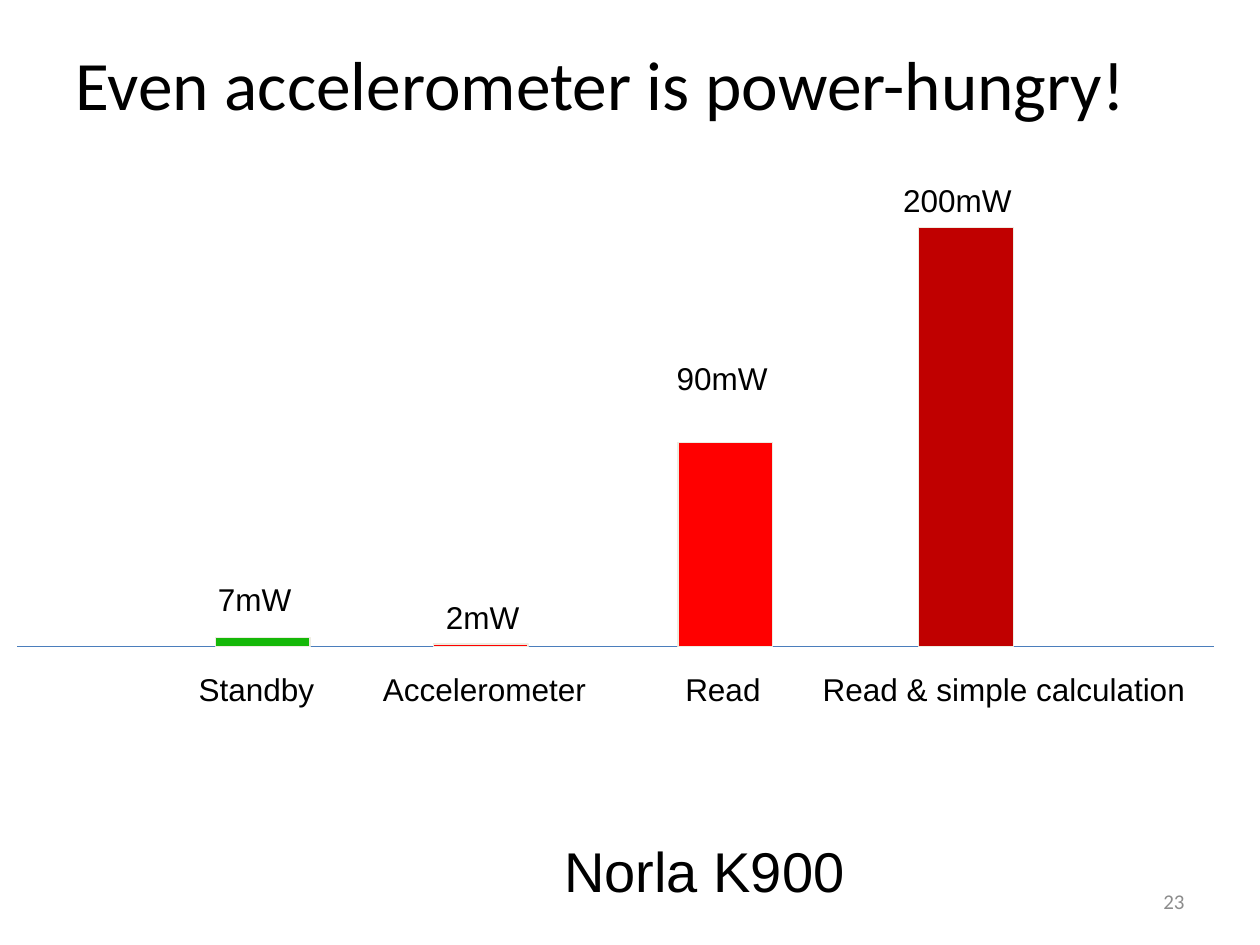
from dataclasses import dataclass

from lxml.etree import SubElement
from pptx import Presentation
from pptx.dml.color import RGBColor
from pptx.enum.shapes import MSO_CONNECTOR as Connector, MSO_SHAPE as Shape
from pptx.enum.text import MSO_ANCHOR as Anchor, PP_ALIGN as Align
from pptx.oxml.ns import qn
from pptx.util import Pt

BLACK = RGBColor(0x00, 0x00, 0x00)
GRAY = RGBColor(0x8C, 0x8C, 0x8C)
CREAM = RGBColor(0xEE, 0xEC, 0xE1)
BLUE = RGBColor(0x4B, 0x7E, 0xBC)
GREEN = RGBColor(0x15, 0xB8, 0x08)
RED = RGBColor(0xFF, 0x00, 0x00)
DARK_RED = RGBColor(0xC0, 0x00, 0x00)

BASELINE = 369.5
BAR_WIDTH = 54
LABEL_HEIGHT = 29
CAPTION_TOP = 379.5


@dataclass
class Board:
    """Draws styled elements on the current slide, measured in points."""

    slide: object
    font: str = "Arial"
    size: float = 18
    color: RGBColor = BLACK

    def text(self, words, left, top, width, height, anchor=Anchor.TOP,
             align=Align.LEFT, wrap=True, **style):
        frame = self.slide.shapes.add_textbox(
            Pt(left), Pt(top), Pt(width), Pt(height)).text_frame
        frame.word_wrap = wrap
        frame.vertical_anchor = anchor
        paragraph = frame.paragraphs[0]
        paragraph.alignment = align
        run = paragraph.add_run()
        run.text = words
        look = {"name": self.font, "size": Pt(self.size)} | style
        color = look.pop("color", self.color)
        for key, value in look.items():
            setattr(run.font, key, value)
        run.font.color.rgb = color

    def bar(self, left, height, color):
        bar = self.slide.shapes.add_shape(
            Shape.RECTANGLE, Pt(left), Pt(BASELINE - height),
            Pt(BAR_WIDTH), Pt(height))
        bar.shadow.inherit = False
        bar.fill.solid()
        bar.fill.fore_color.rgb = color
        bar.line.color.rgb = CREAM
        bar.line.width = Pt(0)

    def axis(self, start, end):
        axis = self.slide.shapes.add_connector(
            Connector.STRAIGHT, Pt(start), Pt(BASELINE), Pt(end), Pt(BASELINE))
        axis.line.color.rgb = BLUE
        axis.line.width = Pt(0.75)
        SubElement(axis.element.spPr, qn("a:effectLst"))


def main():
    deck = Presentation()
    deck.slide_width, deck.slide_height = Pt(720), Pt(540)
    board = Board(deck.slides.add_slide(deck.slide_layouts[6]))

    board.text("Even accelerometer is power-hungry!", 36, 2.2, 648, 90,
               anchor=Anchor.MIDDLE, name="Calibri", size=Pt(39.6))
    board.axis(10, 694)

    readings = [
        ((123.2, 5, GREEN), ("7mW", 117.4, 327.6, 66), ("Standby", 106.5, 99.5)),
        ((247.7, 1.5, RED), ("2mW", 247.7, 338.4, 66), ("Accelerometer", 211.7, 132.5)),
        ((387.4, 116.8, RED), ("90mW", 379.5, 201.6, 84), ("Read", 384.5, 74)),
        ((525, 239.5, DARK_RED), ("200mW", 509, 100, 84),
         ("Read & simple calculation", 463, 243.5)),
    ]
    for bar, (power, left, top, width), (state, state_left, state_width) in readings:
        board.bar(*bar)
        board.text(power, left, top, width, LABEL_HEIGHT)
        board.text(state, state_left, CAPTION_TOP, state_width, LABEL_HEIGHT)

    board.text("Norla K900", 315.4, 474.5, 183, 46, wrap=False, size=Pt(32))
    board.text("23", 516, 500.5, 168, 28.75, anchor=Anchor.MIDDLE,
               align=Align.RIGHT, name="Calibri", size=Pt(12), color=GRAY)
    deck.save("out.pptx")


if __name__ == "__main__":
    main()
